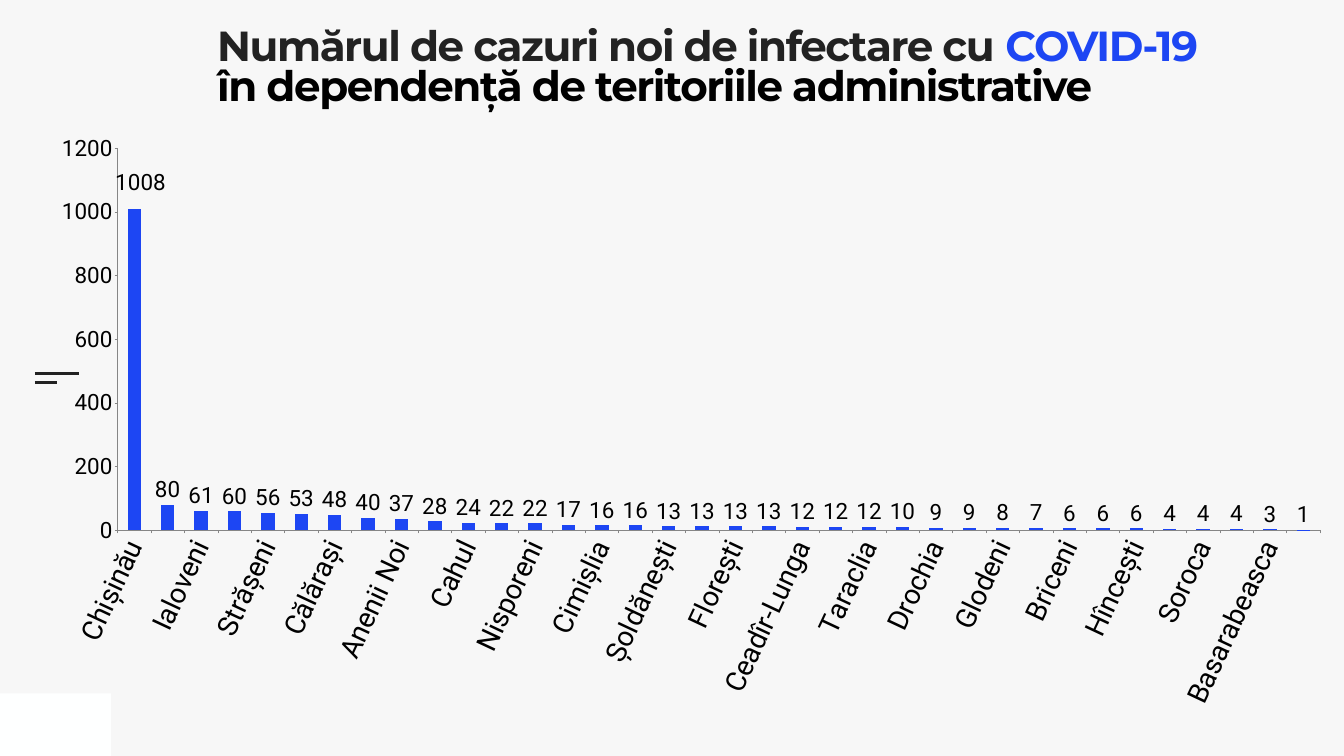
from dataclasses import dataclass

import pptx
import pptx.chart.data
import pptx.dml.color
import pptx.enum.chart
import pptx.enum.shapes
import pptx.enum.text
import pptx.oxml
import pptx.oxml.ns
import pptx.oxml.xmlchemy
import pptx.util

Pt = pptx.util.Pt
qn = pptx.oxml.ns.qn
CHART_NS = "http://schemas.openxmlformats.org/drawingml/2006/chart"


def rgb(code):
    return pptx.dml.color.RGBColor.from_string(code)


@dataclass(frozen=True)
class Theme:
    background = rgb("F7F7F7")
    corner = rgb("FEFFFF")
    dark = rgb("222222")
    black = rgb("000000")
    accent = rgb("1D46F3")
    axis = rgb("868686")
    title_font = "Montserrat"
    chart_font = "Roboto"
    title_size = Pt(60)
    category_size = Pt(40)
    value_size = Pt(32)


THEME = Theme()

NEW_CASES = {
    "Chișinău": 1008, "Ungheni": 80, "Ialoveni": 61, "Transnistria": 60,
    "Strășeni": 56, "Bălți": 53, "Călărași": 48, "Orhei": 40,
    "Anenii Noi": 37, "Comrat": 28, "Cahul": 24, "Fălești": 22,
    "Nisporeni": 22, "Criuleni": 17, "Cimișlia": 16, "Rezina": 16,
    "Șoldănești": 13, "Dubăsari": 13, "Florești": 13, "Rîșcani": 13,
    "Ceadîr-Lunga": 12, "Edineț": 12, "Taraclia": 12, "Căușeni": 10,
    "Drochia": 9, "Sîngerei": 9, "Glodeni": 8, "Dondușeni": 7,
    "Briceni": 6, "Cantemir": 6, "Hîncești": 6, "Leova": 4,
    "Soroca": 4, "Ștefan Vodă": 4, "Basarabeasca": 3, "Telenești": 1,
}

TITLE_LINES = [
    [("Numărul de cazuri noi de infectare cu ", THEME.dark), ("COVID-19", THEME.accent)],
    [("în dependență de teritoriile administrative", THEME.black)],
]


def add_corner_block(slide):
    corner = slide.shapes.add_shape(
        pptx.enum.shapes.MSO_SHAPE.RECTANGLE, Pt(0), Pt(990.72), Pt(158.4), Pt(89.28))
    corner.shadow.inherit = False
    corner.fill.solid()
    corner.fill.fore_color.rgb = THEME.corner
    corner.line.fill.background()


def add_menu_rule(slide, y, length):
    left = 49.68
    rule = slide.shapes.add_connector(
        pptx.enum.shapes.MSO_CONNECTOR.STRAIGHT, Pt(left), Pt(y), Pt(left + length), Pt(y))
    rule.line.color.rgb = THEME.dark
    rule.line.width = Pt(3)
    rule._element.spPr.append(pptx.oxml.xmlchemy.OxmlElement("a:effectLst"))


def fill_title(slide):
    title = slide.shapes.title
    title.left, title.top, title.width, title.height = Pt(310.3), Pt(41.8), Pt(1441.4), Pt(196.6)
    frame = title.text_frame
    frame.margin_left = frame.margin_top = frame.margin_right = frame.margin_bottom = 0
    frame.vertical_anchor = pptx.enum.text.MSO_ANCHOR.TOP
    frame.auto_size = pptx.enum.text.MSO_AUTO_SIZE.NONE
    frame.word_wrap = True
    for index, line in enumerate(TITLE_LINES):
        paragraph = frame.add_paragraph() if index else frame.paragraphs[0]
        paragraph.alignment = pptx.enum.text.PP_ALIGN.LEFT
        paragraph.line_spacing = 0.8
        paragraph.space_before = Pt(0)
        for words, color in line:
            run = paragraph.add_run()
            run.text = words
            run.font.name = THEME.title_font
            run.font.size = THEME.title_size
            run.font.bold = True
            run.font.color.rgb = color
            run._r.get_or_add_rPr().set("spc", "-200")


def style_font(font, size):
    font.name = THEME.chart_font
    font.size = size
    font.color.rgb = THEME.black


def style_axis(axis, size):
    style_font(axis.tick_labels.font, size)
    axis.has_major_gridlines = False
    axis.major_tick_mark = pptx.enum.chart.XL_TICK_MARK.OUTSIDE
    axis.minor_tick_mark = pptx.enum.chart.XL_TICK_MARK.NONE
    axis.format.line.color.rgb = THEME.axis
    axis.format.line.width = Pt(0.75)


def manual_layout(**settings):
    """Return a c:layout element holding the given settings in order."""
    items = "".join(f'<c:{name} val="{value}"/>' for name, value in settings.items())
    return pptx.oxml.parse_xml(
        f'<c:layout xmlns:c="{CHART_NS}"><c:manualLayout>{items}</c:manualLayout></c:layout>')


def place_plot(chart):
    plot_area = chart._chartSpace.chart.plotArea
    for layout in plot_area.findall(qn("c:layout")):
        plot_area.remove(layout)
    plot_area.insert(0, manual_layout(
        layoutTarget="inner", xMode="edge", yMode="edge", x=0.049, y=0.022, w=0.948, h=0.64))


def shift_label(series, index, x, y):
    label = series.points[index].data_label
    style_font(label.font, THEME.value_size)
    label.position = pptx.enum.chart.XL_LABEL_POSITION.OUTSIDE_END
    for element in series._element.iter(qn("c:dLbl")):
        position = element.find(qn("c:idx"))
        if position.get("val") == str(index):
            position.addnext(manual_layout(x=x, y=y))


def add_cases_chart(slide):
    data = pptx.chart.data.CategoryChartData()
    data.categories = list(NEW_CASES)
    data.add_series("Series 1", list(NEW_CASES.values()))
    chart = slide.shapes.add_chart(
        pptx.enum.chart.XL_CHART_TYPE.COLUMN_CLUSTERED,
        Pt(79.2), Pt(192.96), Pt(1812.24), Pt(853.2), data).chart
    chart.has_legend = False
    chart.has_title = False
    style_font(chart.font, THEME.category_size)
    place_plot(chart)

    # Axes: every second territory is named, on a slant
    territories, cases = chart.category_axis, chart.value_axis
    style_axis(territories, THEME.category_size)
    style_axis(cases, THEME.value_size)
    cases.minimum_scale, cases.maximum_scale, cases.major_unit = 0, 1200, 200
    territories._element.find(qn("c:txPr")).find(qn("a:bodyPr")).set("rot", "-3900000")
    skip = pptx.oxml.xmlchemy.OxmlElement("c:tickLblSkip")
    skip.set("val", "2")
    territories._element.find(qn("c:noMultiLvlLbl")).addprevious(skip)

    # Columns and their values
    plot = chart.plots[0]
    plot.gap_width = 150
    plot.vary_by_categories = False
    series = plot.series[0]
    series.invert_if_negative = False
    series.format.fill.solid()
    series.format.fill.fore_color.rgb = THEME.accent
    labels = series.data_labels
    labels.show_value = True
    labels.position = pptx.enum.chart.XL_LABEL_POSITION.OUTSIDE_END
    style_font(labels.font, THEME.value_size)
    shift_label(series, 0, 0.005, -0.02)


def main():
    deck = pptx.Presentation()
    deck.slide_width, deck.slide_height = Pt(1920.24), Pt(1080)
    slide = deck.slides.add_slide(deck.slide_layouts[5])
    slide.background.fill.solid()
    slide.background.fill.fore_color.rgb = THEME.background

    # Corner block and menu mark
    add_corner_block(slide)
    for y, length in ((533.52, 63.36), (546.48, 31.68)):
        add_menu_rule(slide, y, length)

    # Title and chart
    fill_title(slide)
    add_cases_chart(slide)
    deck.save("out.pptx")


if __name__ == "__main__":
    main()
